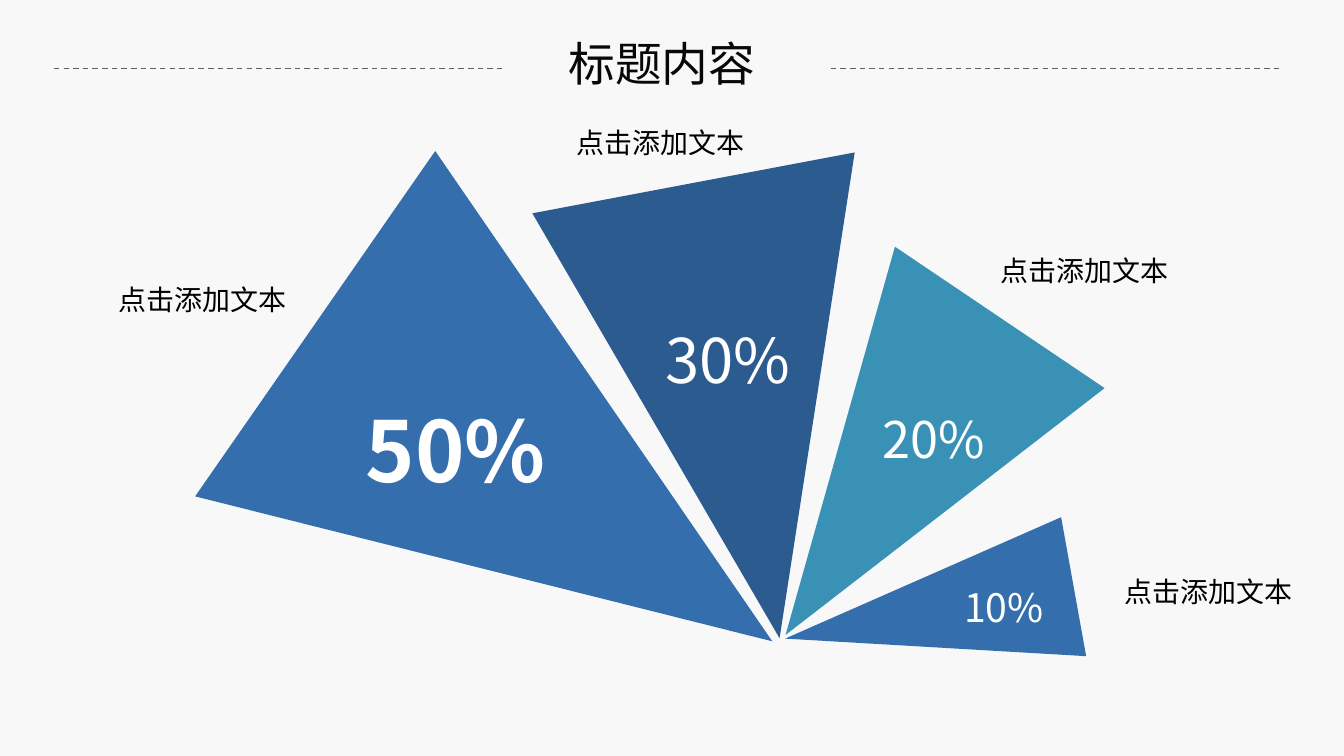
from dataclasses import dataclass

from lxml import etree
from pptx import Presentation
from pptx.dml.color import RGBColor as Rgb
from pptx.enum.dml import MSO_LINE_DASH_STYLE as Dash
from pptx.enum.shapes import MSO_CONNECTOR as Connector, MSO_SHAPE as Shape
from pptx.enum.text import MSO_ANCHOR as Anchor, PP_ALIGN as Align
from pptx.oxml.ns import qn
from pptx.util import Cm, Pt


@dataclass(frozen=True)
class Theme:
    font: str = "Noto Sans CJK SC"
    background: str = "F8F8F8"
    heading: str = "080808"
    label: str = "000000"
    value: str = "FFFFFF"
    rule: str = "5F5F5F"
    blue: str = "356EAD"
    navy: str = "2C5B8F"
    teal: str = "3992B5"
    heading_size: int = 25
    label_size: int = 15
    value_sizes: tuple = (45, 33, 27, 21)


class SlideBuilder:
    def __init__(self, slide, theme):
        self.slide = slide
        self.theme = theme
        background = slide.background.fill
        background.solid()
        background.fore_color.rgb = Rgb.from_string(theme.background)

    def text(self, wording, box, size, color, bold=False):
        frame = self.slide.shapes.add_textbox(*map(Cm, box)).text_frame
        frame.word_wrap = True
        frame.vertical_anchor = Anchor.MIDDLE
        frame.margin_top = frame.margin_bottom = 0
        frame.text = wording
        paragraph = frame.paragraphs[0]
        paragraph.alignment = Align.CENTER
        font = paragraph.runs[0].font
        font.size = Pt(size)
        font.bold = bold
        font.color.rgb = Rgb.from_string(color)
        font.name = self.theme.font
        east_asian = etree.SubElement(paragraph.runs[0]._r.get_or_add_rPr(), qn("a:ea"))
        east_asian.set("typeface", self.theme.font)

    def dashed_rule(self, left, right, y):
        rule = self.slide.shapes.add_connector(
            Connector.STRAIGHT, Cm(left), Cm(y), Cm(right), Cm(y))
        rule.line.color.rgb = Rgb.from_string(self.theme.rule)
        rule.line.width = Pt(0.75)
        rule.line.dash_style = Dash.DASH
        etree.SubElement(rule._element.spPr, qn("a:effectLst"))

    def triangle(self, box, rotation, color):
        wedge = self.slide.shapes.add_shape(Shape.ISOSCELES_TRIANGLE, *map(Cm, box))
        wedge.rotation = rotation
        wedge.shadow.inherit = False
        wedge.fill.solid()
        wedge.fill.fore_color.rgb = Rgb.from_string(color)
        wedge.line.fill.background()


def main():
    deck = Presentation()
    deck.slide_width, deck.slide_height = Cm(25.4), Cm(14.29)
    theme = Theme()
    builder = SlideBuilder(deck.slides.add_slide(deck.slide_layouts[6]), theme)

    builder.text("标题内容", (10.31, 0.53, 4.39, 1.32), theme.heading_size, theme.heading)
    for left in (15.7, 1.02):
        builder.dashed_rule(left, left + 8.48, 1.3)

    wedges = (
        ((6.3, 3.86, 7.95, 10.52), 124.8, theme.blue),
        ((10.82, 3.38, 6.2, 8.76), 169.3, theme.navy),
        ((14.48, 5.38, 4.78, 7.24), 214, theme.teal),
        ((16.23, 8.81, 2.67, 5.54), 259.8, theme.blue),
    )
    for box, rotation, color in wedges:
        builder.triangle(box, rotation, color)

    captions = ((1.7, 5.21, 4.27), (10.31, 2.24, 4.34), (18.42, 4.67, 4.17), (20.78, 10.74, 4.11))
    for left, top, width in captions:
        builder.text("点击添加文本", (left, top, width, 0.89), theme.label_size, theme.label)

    shares = (
        ("50%", (6.1, 7.39, 5.03, 2.18)),
        ("30%", (11.66, 5.94, 4.19, 1.68)),
        ("20%", (16.1, 7.57, 3.1, 1.42)),
        ("10%", (17.22, 10.9, 3.51, 1.14)),
    )
    for (share, box), size in zip(shares, theme.value_sizes):
        builder.text(share, box, size, theme.value, bold=size == max(theme.value_sizes))

    deck.save("out.pptx")


if __name__ == "__main__":
    main()
